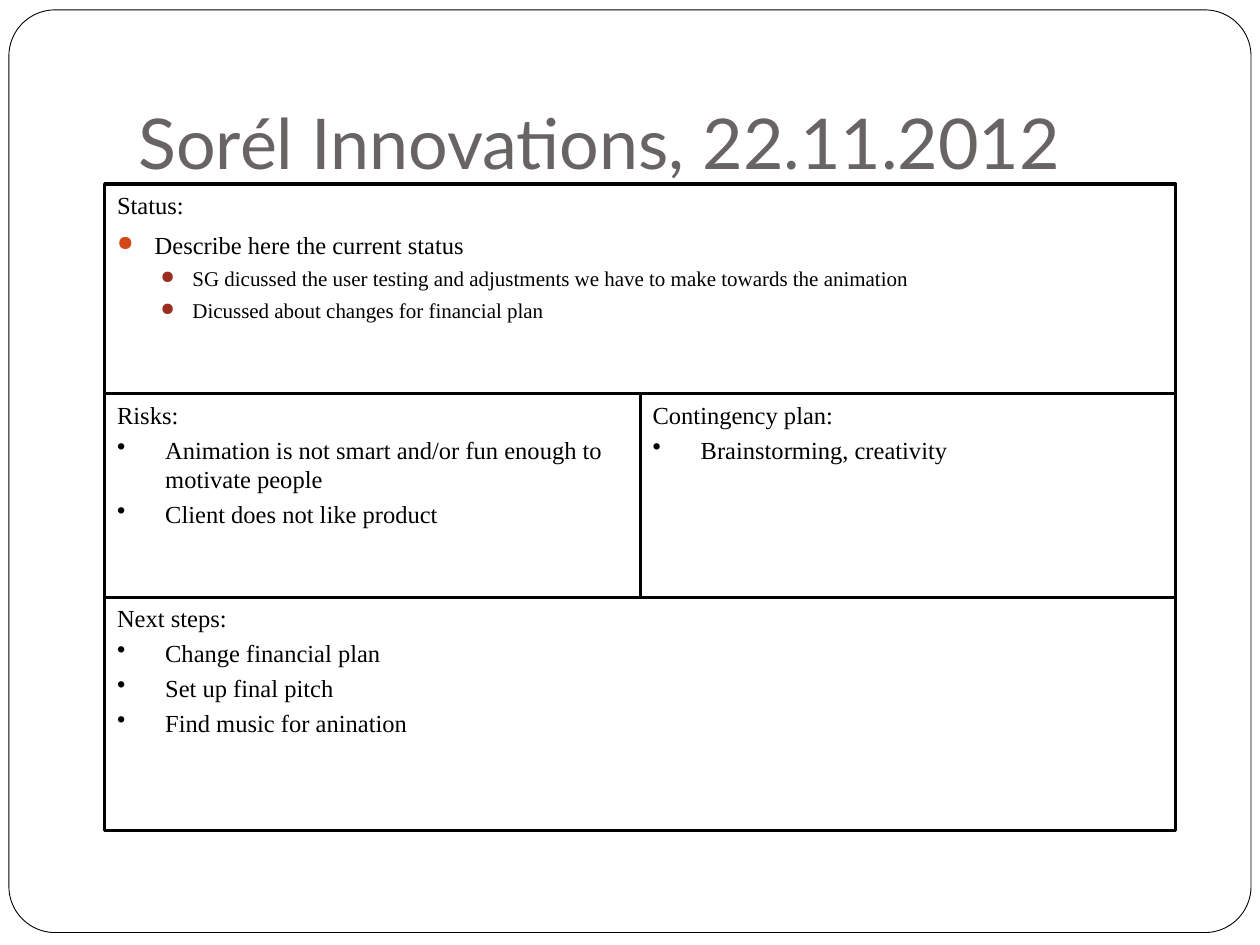
from lxml import etree
from pptx import Presentation
from pptx.dml.color import RGBColor
from pptx.enum import shapes, text
from pptx.oxml import ns
from pptx.util import Cm, Pt

BLACK, WHITE, GREY = "000000", "FFFFFF", "696464"
ORANGE, RED = "D34817", "9B2D1F"

# Paragraph styles: hanging indents in cm, the rest in points
STATUS = dict(left=0.76, hang=0.76, before=5.8, size=14)
STATUS_BULLET = dict(STATUS, bullet="●", bullet_color=ORANGE, bullet_size=85)
STATUS_DETAIL = dict(left=1.52, hang=0.64, before=3.7, size=12, level=1,
                     bullet="●", bullet_color=RED, bullet_size=85)
HEADING = dict(left=0.97, hang=0.97, before=3.2, size=14)
BULLET = dict(HEADING, bullet="•")


def rgb(hex_color):
    return RGBColor.from_string(hex_color)


def add_outline(slide, kind, box, line_width):
    outline = slide.shapes.add_shape(kind, *(Cm(length) for length in box))
    outline.shadow.inherit = False
    outline.fill.background()
    outline.line.color.rgb = rgb(BLACK)
    outline.line.width = Pt(line_width)
    return outline


def format_runs(paragraph, font_name, size, color):
    for run in paragraph.runs:
        run.font.name = font_name
        run.font.size = Pt(size)
        run.font.color.rgb = rgb(color)


def set_bullet(paragraph, left, hang, bullet, color, size):
    properties = paragraph._p.get_or_add_pPr()
    properties.set("marL", str(Cm(left)))
    properties.set("indent", str(-Cm(hang)))

    def add(parent, tag, **attributes):
        return etree.SubElement(parent, ns.qn(tag), attributes)

    if not bullet:
        add(properties, "a:buNone")
        return
    add(add(properties, "a:buClr"), "a:srgbClr", val=color)
    add(properties, "a:buSzPct", val=str(size * 1000))
    add(properties, "a:buChar", char=bullet)


def write_paragraph(paragraph, wording, left, hang, before, size, level=0,
                    bullet=None, bullet_color=BLACK, bullet_size=100):
    paragraph.text = wording
    paragraph.level = level
    paragraph.alignment = text.PP_ALIGN.LEFT
    paragraph.space_before = Pt(before)
    set_bullet(paragraph, left, hang, bullet, bullet_color, bullet_size)
    format_runs(paragraph, "Times New Roman", size, BLACK)


def add_frame(slide, box):
    """Rounded page border, behind everything else."""
    frame = add_outline(slide, shapes.MSO_SHAPE.ROUNDED_RECTANGLE, box, 0.5)
    frame.adjustments[0] = 0.05
    frame.fill.solid()
    frame.fill.fore_color.rgb = rgb(WHITE)
    slide.shapes._spTree.insert(2, frame._element)


def set_title(slide, wording, box):
    title = slide.shapes.title
    title.left, title.top, title.width, title.height = (Cm(n) for n in box)
    heading = title.text_frame
    heading.text = wording
    heading.auto_size = text.MSO_AUTO_SIZE.NONE
    heading.vertical_anchor = text.MSO_ANCHOR.BOTTOM
    heading.margin_bottom = Cm(0.25)
    heading.paragraphs[0].alignment = text.PP_ALIGN.LEFT
    format_runs(heading.paragraphs[0], "Lato", 40, GREY)


def add_panel(slide, box, lines):
    panel = add_outline(slide, shapes.MSO_SHAPE.RECTANGLE, box, 1.75)
    body = panel.text_frame
    body.word_wrap = True
    body.vertical_anchor = text.MSO_ANCHOR.TOP
    for index, (wording, style) in enumerate(lines):
        paragraph = body.add_paragraph() if index else body.paragraphs[0]
        write_paragraph(paragraph, wording, **style)


def list_lines(heading, *items):
    return [(heading, HEADING)] + [(item, BULLET) for item in items]


def add_report(slide, left, top, width, row_heights):
    """Rows of equally wide panels: status, risks and plan, next steps."""
    status = [
        ("Status:", STATUS),
        ("Describe here the current status", STATUS_BULLET),
        ("SG dicussed the user testing and adjustments we have to make "
         "towards the animation", STATUS_DETAIL),
        ("Dicussed about changes for financial plan", STATUS_DETAIL),
    ]
    risks = list_lines(
        "Risks:",
        "Animation is not smart and/or fun enough to motivate people",
        "Client does not like product")
    contingency = list_lines("Contingency plan:", "Brainstorming, creativity")
    next_steps = list_lines("Next steps:", "Change financial plan",
                            "Set up final pitch", "Find music for anination")

    rows = [[status], [risks, contingency], [next_steps]]
    for panels, height in zip(rows, row_heights):
        panel_width = width / len(panels)
        for column, lines in enumerate(panels):
            box = (left + column * panel_width, top, panel_width, height)
            add_panel(slide, box, lines)
        top += height


def main():
    deck = Presentation()
    deck.slide_width, deck.slide_height = Cm(25.4), Cm(19.05)
    slide = deck.slides.add_slide(deck.slide_layouts[5])
    add_frame(slide, (0.18, 0.2, 25.04, 18.6))
    set_title(slide, "Sorél Innovations, 22.11.2012", (2.54, 0.76, 21.59, 3.18))
    add_report(slide, 2.11, 3.71, 21.59, (4.22, 4.11, 4.7))
    deck.save("out.pptx")


if __name__ == "__main__":
    main()
